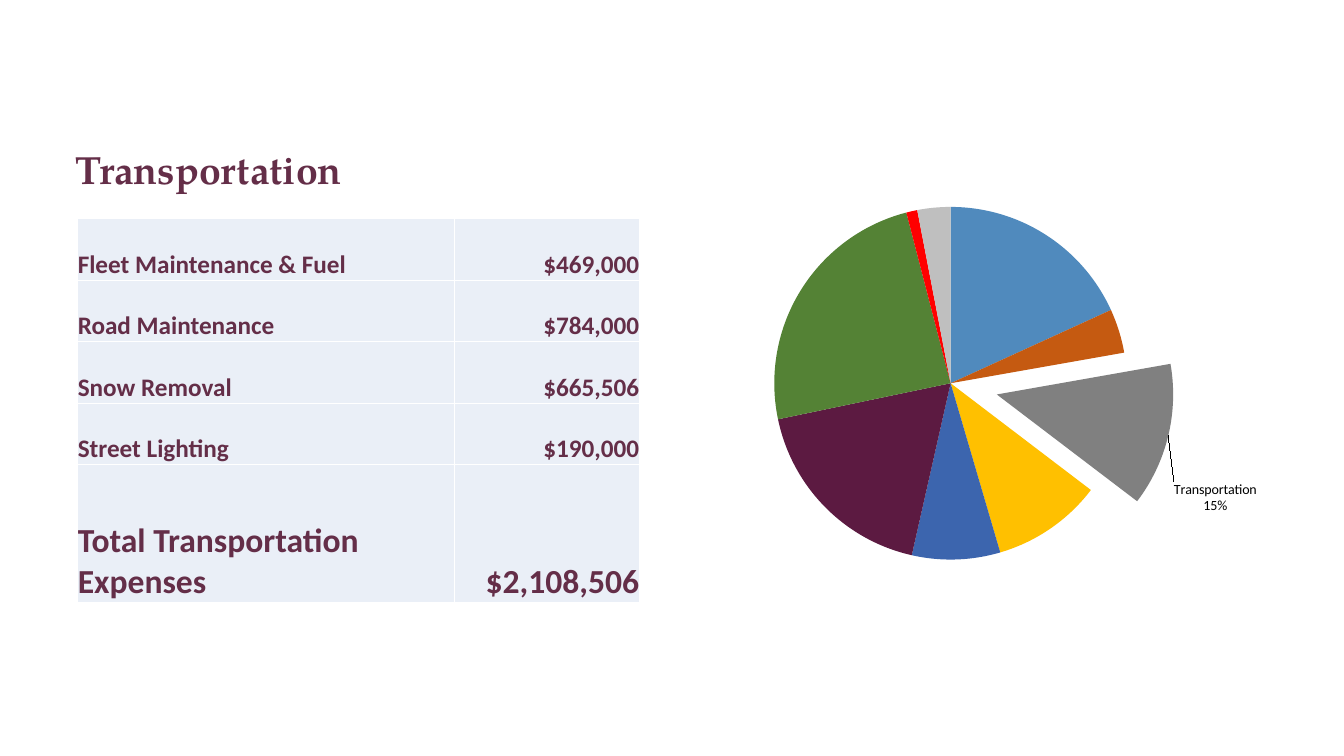
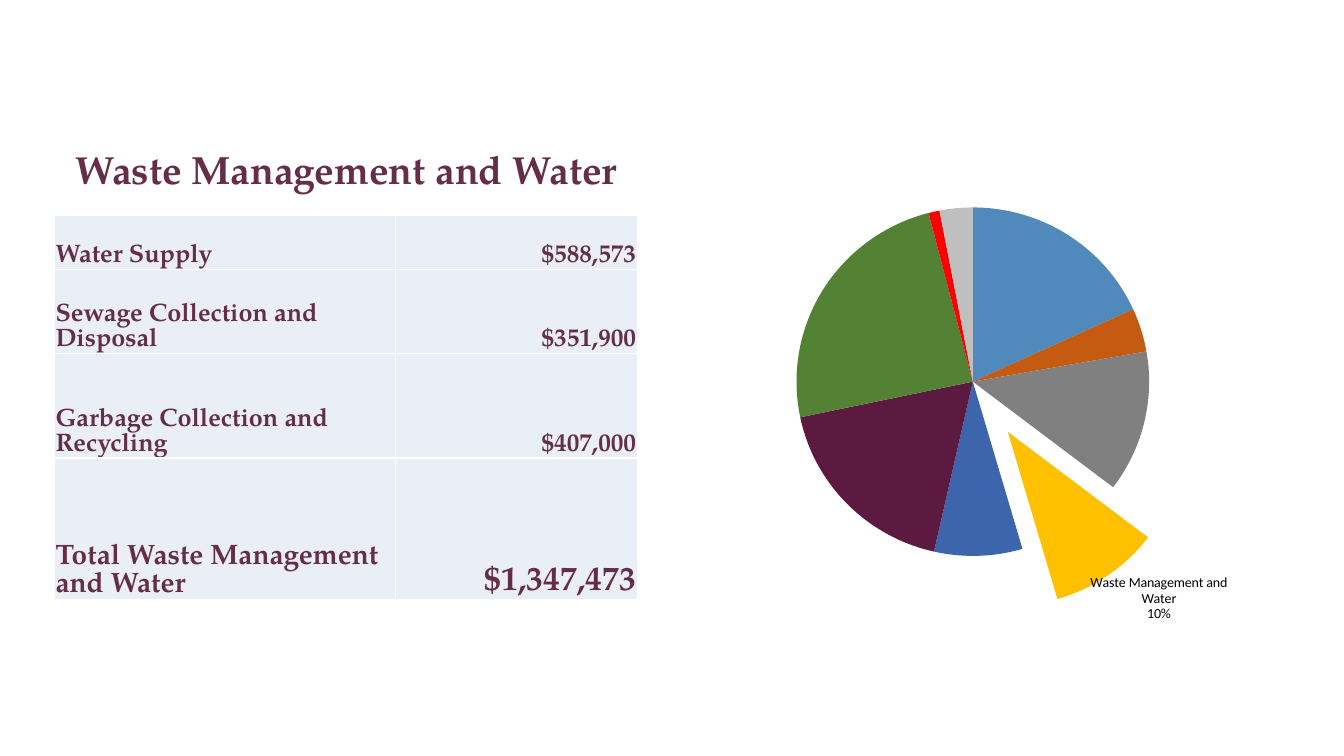
from lxml import etree
from pptx import Presentation
from pptx import util as u
from pptx.chart import data as chart_data
from pptx.dml import color
from pptx.enum import chart as charts, text
from pptx.oxml import parse_xml
from pptx.oxml.ns import nsdecls, qn

PLUM, CELL, WHITE, BLACK = "642E48", "EAEFF7", "FFFFFF", "000000"
SERIF, SANS = "TeX Gyre Pagella", "Calibri"
CATEGORIES = {
    "Administration": (18, "508ABD"),
    "Fire and Emergency Services": (4, "C55A11"),
    "Transportation": (13, "808080"),
    "Waste Management and Water": (10, "FFC000"),
    "Recreation & Cultural Services": (8, "3C65AE"),
    "Capital Financing": (18, "5C1A41"),
    "Non Financed Capital Purch.": (24, "548235"),
    "Reserve Fund": (1, "FF0000"),
    "Other Fiscal Services": (3, "BFBFBF"),
}
PLOT_BOX = {"x": 0.05, "y": 0.055, "w": 0.825, "h": 0.795}

SLIDES = [
    {
        "title": "Transportation",
        "table": {
            "box": (1.96, 5.51), "columns": (9.5, 4.65),
            "heights": (1.55, 1.55, 1.55, 1.55, 3.48), "font": SANS, "inset": 0,
            "total_sizes": (24, 24),
            "rows": [
                ("Fleet Maintenance & Fuel", "$469,000"),
                ("Road Maintenance", "$784,000"),
                ("Snow Removal", "$665,506"),
                ("Street Lighting", "$190,000"),
                ("Total Transportation Expenses", "$2,108,506"),
            ],
        },
        "chart": {
            "box": (15.9, 4.6, 17.42, 11.18), "explosion": 27,
            "label_shift": (0, 0.1), "label_lines": ("Transportation", "15%"),
        },
    },
    {
        "title": "Waste Management and Water",
        "table": {
            "box": (1.37, 5.44), "columns": (8.59, 6.1),
            "heights": (1.35, 2.11, 2.64, 3.56), "font": SERIF, "inset": 0.03,
            "total_sizes": (20, 24),
            "rows": [
                ("Water Supply", "$588,573"),
                ("Sewage Collection and Disposal", "$351,900"),
                ("Garbage Collection and Recycling", "$407,000"),
                ("Total Waste Management and Water", "$1,347,473"),
            ],
        },
        "chart": {
            "box": (16.46, 4.62, 17.42, 11.18), "explosion": 35,
            "label_shift": (-0.03, 0), "label_lines": None,
        },
    },
]


def rgb(value):
    return color.RGBColor.from_string(value)


def apply_format(target, values):
    for name, value in values.items():
        setattr(target, name, value)


def format_font(font, name, size, value, bold):
    apply_format(font, {"name": name, "size": u.Pt(size), "bold": bold})
    font.color.rgb = rgb(value)


def add_title(slide, title, left, top, width, height):
    shape = slide.shapes.add_textbox(u.Cm(left), u.Cm(top), u.Cm(width), u.Cm(height))
    shape.text_frame.word_wrap = True
    paragraph = shape.text_frame.paragraphs[0]
    paragraph.text = title
    paragraph.line_spacing = 0.9
    format_font(paragraph.font, SERIF, 28, PLUM, True)


def add_borders(cell):
    properties = cell._tc.get_or_add_tcPr()
    for position, side in enumerate(("lnL", "lnR", "lnT", "lnB")):
        properties.insert(position, parse_xml(
            f'<a:{side} {nsdecls("a")} w="12700"><a:solidFill>'
            f'<a:srgbClr val="{WHITE}"/></a:solidFill></a:{side}>'))


def fill_cell(cell, words, font, size, alignment, inset):
    apply_format(cell, {
        "text": words,
        "vertical_anchor": text.MSO_ANCHOR.BOTTOM,
        "margin_left": u.Cm(inset),
        "margin_right": u.Cm(inset),
        "margin_top": u.Cm(inset),
        "margin_bottom": 0,
    })
    cell.fill.solid()
    cell.fill.fore_color.rgb = rgb(CELL)
    add_borders(cell)
    paragraph = cell.text_frame.paragraphs[0]
    paragraph.alignment = alignment
    format_font(paragraph.runs[0].font, font, size, PLUM, True)


def add_expenses(slide, box, columns, heights, font, inset, total_sizes, rows):
    left, top = box
    table = slide.shapes.add_table(
        len(rows), len(columns), u.Cm(left), u.Cm(top),
        u.Cm(sum(columns)), u.Cm(sum(heights))).table
    apply_format(table, {"first_row": False, "horz_banding": False})
    for column, width in zip(table.columns, columns):
        column.width = u.Cm(width)
    alignments = (text.PP_ALIGN.LEFT, text.PP_ALIGN.RIGHT)
    for index, (row, height, entries) in enumerate(zip(table.rows, heights, rows)):
        row.height = u.Cm(height)
        sizes = total_sizes if index == len(rows) - 1 else (18, 18)
        for cell, words, size, alignment in zip(row.cells, entries, sizes, alignments):
            fill_cell(cell, words, font, size, alignment, inset)


def manual_layout(values):
    parts = "".join(f'<c:{name} val="{value}"/>' for name, value in values.items())
    return parse_xml(f'<c:layout {nsdecls("c")}><c:manualLayout>{parts}'
                     '</c:manualLayout></c:layout>')


def set_plot_box(chart):
    plot_area = chart._chartSpace.chart.plotArea
    for layout in plot_area.findall(qn("c:layout")):
        plot_area.remove(layout)
    plot_area.insert(0, manual_layout(
        {"layoutTarget": "inner", "xMode": "edge", "yMode": "edge", **PLOT_BOX}))


def label_slice(series, point, shift, lines):
    apply_format(series.data_labels, {"show_value": False})
    label = point.data_label
    if lines:
        label.text_frame.text = "\n".join(lines)
        for paragraph in label.text_frame.paragraphs:
            format_font(paragraph.runs[0].font, SANS, 10, BLACK, False)
    else:
        format_font(label.font, SANS, 10, BLACK, False)
    label.position = charts.XL_LABEL_POSITION.OUTSIDE_END
    element = series._element.find(".//" + qn("c:dLbl"))
    for name, shown in {"showVal": 0, "showCatName": 1, "showPercent": 1}.items():
        element.find(qn("c:" + name)).set("val", str(shown))
    element.insert(1, manual_layout(dict(zip("xy", shift))))
    etree.SubElement(element, qn("c:separator")).text = "\n"


def add_pie(slide, highlighted, box, explosion, label_shift, label_lines):
    data = chart_data.CategoryChartData()
    data.categories = list(CATEGORIES)
    data.add_series("Series 1", [value for value, _ in CATEGORIES.values()])
    chart = slide.shapes.add_chart(
        charts.XL_CHART_TYPE.PIE, *(u.Cm(length) for length in box), data).chart
    apply_format(chart, {"has_legend": False, "has_title": False})
    format_font(chart.font, SANS, 10, BLACK, False)
    set_plot_box(chart)
    plot = chart.plots[0]
    plot.vary_by_categories = True
    series = plot.series[0]
    for index, (name, (_, value)) in enumerate(CATEGORIES.items()):
        point = series.points[index]
        point.format.fill.solid()
        point.format.fill.fore_color.rgb = rgb(value)
        point.format.line.fill.background()
        if name == highlighted:
            properties = series._element.findall(qn("c:dPt"))[index].find(qn("c:spPr"))
            properties.addprevious(parse_xml(
                f'<c:explosion {nsdecls("c")} val="{explosion}"/>'))
            label_slice(series, point, label_shift, label_lines)


def add_department(presentation, title, table, chart):
    slide = presentation.slides.add_slide(presentation.slide_layouts[6])
    add_title(slide, title, 1.65, 3.66, 15.2, 1.32)
    add_expenses(slide, **table)
    add_pie(slide, title, **chart)


def main():
    presentation = Presentation()
    apply_format(presentation, {"slide_width": u.Cm(33.87), "slide_height": u.Cm(19.05)})
    for content in SLIDES:
        add_department(presentation, **content)
    presentation.save("out.pptx")


if __name__ == "__main__":
    main()
